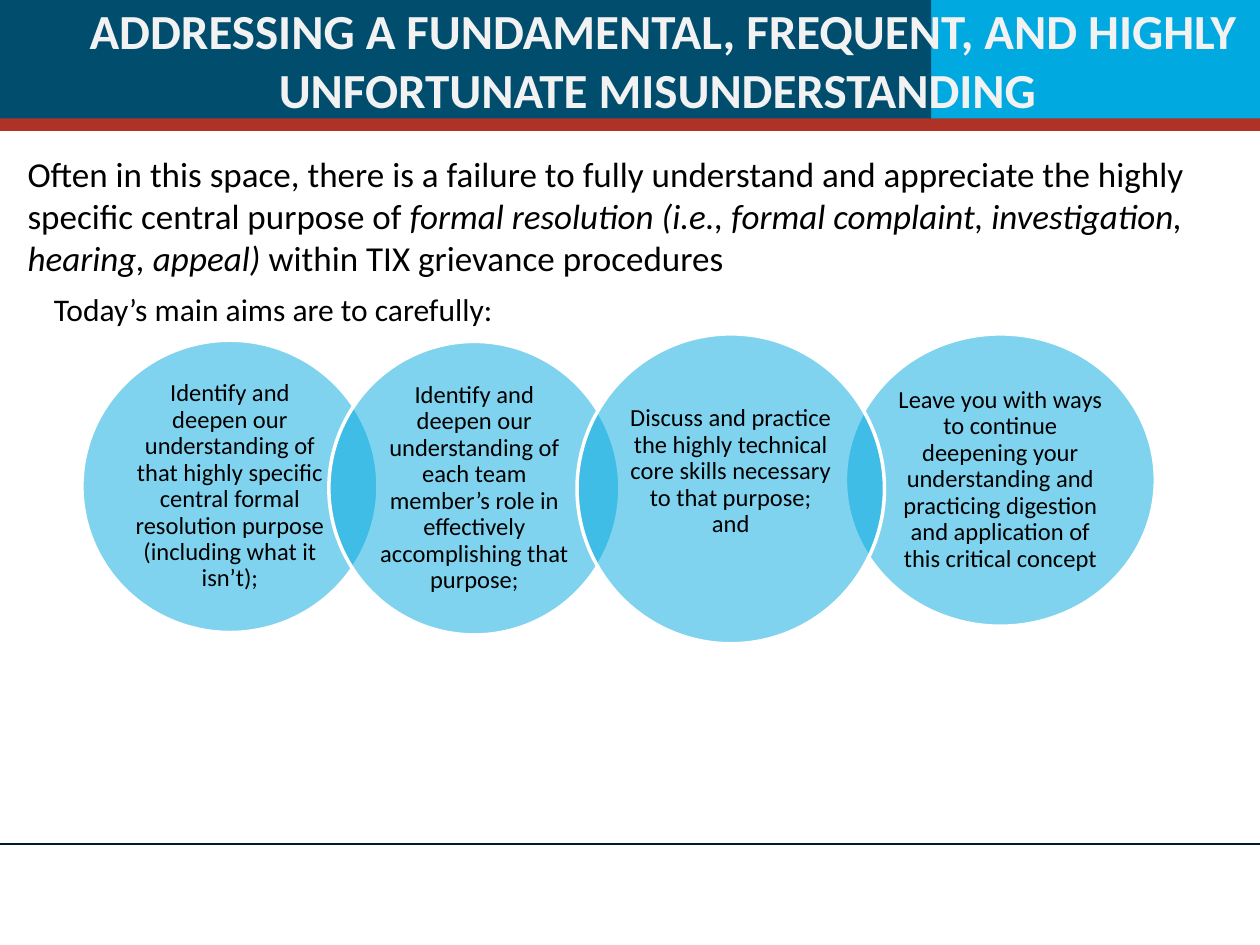
from pptx import Presentation
from pptx.dml.color import RGBColor
from pptx.enum.shapes import MSO_SHAPE
from pptx.enum.text import MSO_ANCHOR, PP_ALIGN
from pptx.oxml.ns import qn
from pptx.util import Inches, Pt
from lxml import etree

RECTANGLE, OVAL = MSO_SHAPE.RECTANGLE, MSO_SHAPE.OVAL
LEFT, CENTER = PP_ALIGN.LEFT, PP_ALIGN.CENTER
TOP, MIDDLE = MSO_ANCHOR.TOP, MSO_ANCHOR.MIDDLE

BANDS = [
    (2.65, -0.07, 7.47, 1.02, "00A9DF", None),
    (-0.08, -0.02, 7.47, 1.02, "004D6E", None),
    (-0.12, 6.7, 10.24, 1.12, "FFFFFF", "001C2A"),
    (-0.12, 0.94, 10.24, 0.1, "AE3326", None),
]
AIMS = [
    (0.65, 2.7, 2.35, 2.32, 0.06,
     "Identify and deepen our understanding of that highly specific central "
     "formal resolution purpose (including what it isn’t);"),
    (6.71, 2.65, 2.46, 2.32, 0.06,
     "Leave you with ways to continue deepening your understanding and "
     "practicing digestion and application of this critical concept"),
    (2.61, 2.71, 2.31, 2.33, 0.06,
     "Identify and deepen our understanding of each team member’s role in "
     "effectively accomplishing that purpose;"),
    (4.58, 2.65, 2.44, 2.46, 0.33,
     "Discuss and practice the highly technical core skills necessary to that "
     "purpose; and"),
]


def color(hex_text):
    return RGBColor.from_string(hex_text)


class SlideBuilder:
    """Holds the style and the current slide, and adds each kind of element."""

    font_name = "Calibri"
    text_color = "000000"
    circle_color = "00A9DF"
    circle_alpha = 50
    circle_inset = 0.06

    def __init__(self, slide):
        self.slide = slide

    def shape(self, kind, box, fill, line=None, line_width=1):
        shape = self.slide.shapes.add_shape(kind, *map(Inches, box))
        shape.shadow.inherit = False
        shape.fill.solid()
        shape.fill.fore_color.rgb = color(fill)
        if line:
            shape.line.color.rgb = color(line)
            shape.line.width = Pt(line_width)
        else:
            shape.line.fill.background()
        return shape

    def set_text(self, shape, runs, size, align=LEFT, anchor=TOP, bold=False,
                 font_color=text_color):
        frame = shape.text_frame
        frame.word_wrap = True
        frame.vertical_anchor = anchor
        paragraph = frame.paragraphs[0]
        paragraph.alignment = align
        for text, italic in runs:
            run = paragraph.add_run()
            run.text = text
            run.font.name = self.font_name
            run.font.size = Pt(size)
            run.font.bold = bold
            run.font.italic = italic
            run.font.color.rgb = color(font_color)
        return paragraph

    def text(self, box, runs, size, **style):
        text_box = self.slide.shapes.add_textbox(*map(Inches, box))
        self.set_text(text_box, runs, size, **style)

    def circle(self, box, bottom_inset, text):
        circle = self.shape(OVAL, box, self.circle_color, "FFFFFF", 2)
        fill_color = circle.element.spPr.find(qn("a:solidFill"))[0]
        alpha = etree.SubElement(fill_color, qn("a:alpha"))
        alpha.set("val", str(self.circle_alpha * 1000))
        frame = circle.text_frame
        frame.margin_left = frame.margin_right = frame.margin_top = Inches(self.circle_inset)
        frame.margin_bottom = Inches(bottom_inset)
        paragraph = self.set_text(circle, [(text, False)], 14, align=CENTER, anchor=MIDDLE)
        paragraph.line_spacing = 0.9


def main():
    presentation = Presentation()
    presentation.slide_width, presentation.slide_height = Inches(10), Inches(7.5)
    slide = presentation.slides.add_slide(presentation.slide_layouts[6])
    builder = SlideBuilder(slide)

    for *box, fill, line in BANDS:
        builder.shape(RECTANGLE, box, fill, line)
    builder.text(
        (0.6, 0.17, 9.32, 0.6),
        [("ADDRESSING A FUNDAMENTAL, FREQUENT, AND HIGHLY UNFORTUNATE MISUNDERSTANDING ", False)],
        28, align=CENTER, anchor=MIDDLE, bold=True, font_color="F2F2F2")
    for *box, bottom_inset, text in AIMS:
        builder.circle(box, bottom_inset, text)
    builder.text(
        (0.12, 1.16, 9.79, 1.11),
        [("Often in this space, there is a failure to fully understand and appreciate "
          "the highly specific central purpose of ", False),
         ("formal resolution (i.e., formal complaint, investigation, hearing, appeal) ", True),
         ("within TIX grievance procedures", False)],
        20)
    builder.text((0.33, 2.25, 8.83, 0.4), [("Today’s main aims are to carefully:", False)], 18)

    presentation.save("out.pptx")


if __name__ == "__main__":
    main()
